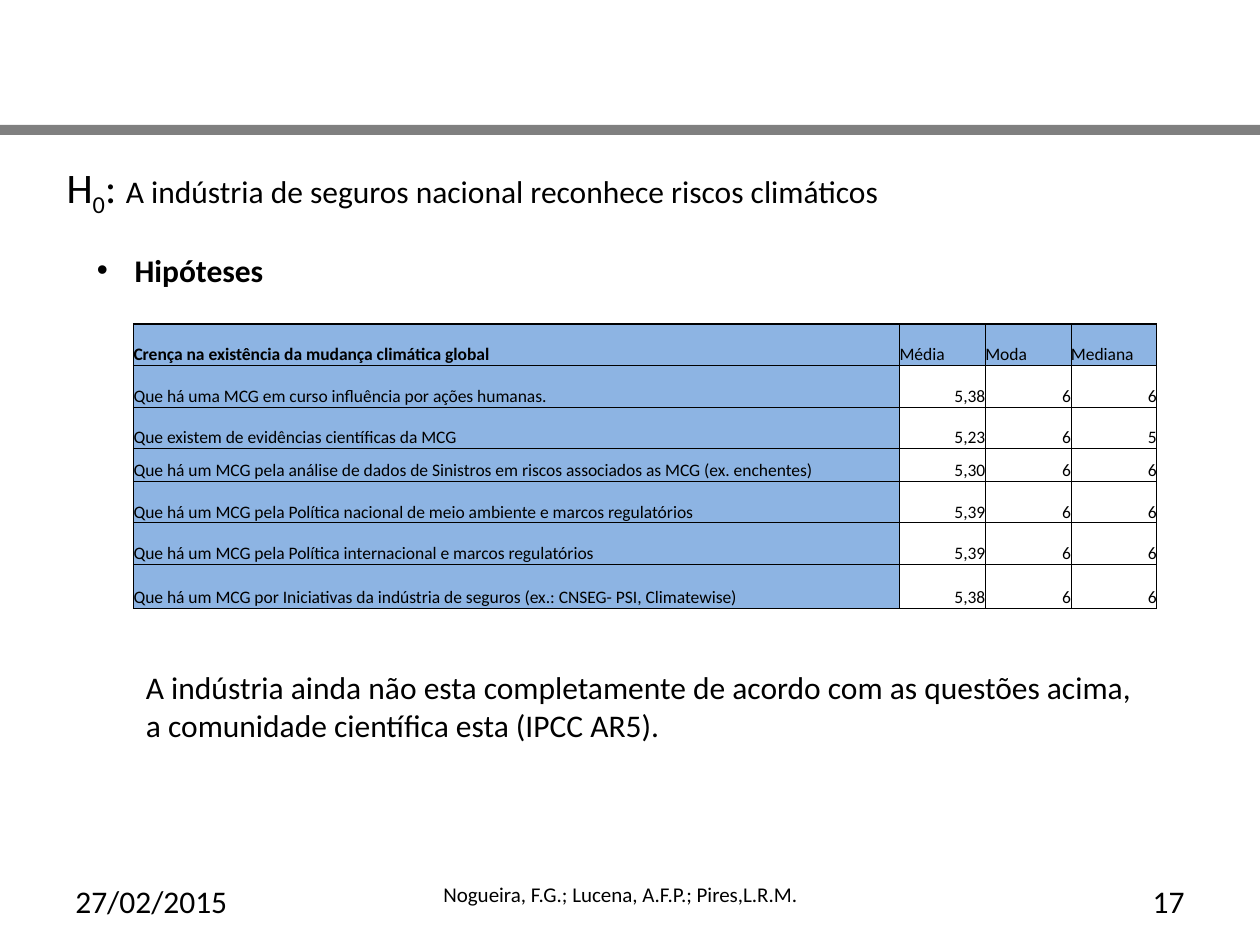
import pptx
import pptx.util
import pptx.dml.color
import pptx.enum.shapes
import pptx.enum.text
import pptx.oxml.ns
from lxml import etree

Inches = pptx.util.Inches
Pt = pptx.util.Pt
RGBColor = pptx.dml.color.RGBColor
ALIGN = pptx.enum.text.PP_ALIGN
qn = pptx.oxml.ns.qn

BLACK = RGBColor(0, 0, 0)
WHITE = RGBColor(255, 255, 255)
GRAY = RGBColor(0x80, 0x80, 0x80)
BLUE = RGBColor(0x8D, 0xB4, 0xE3)
FONT = "Calibri"

HEADER = ["Crença na existência da mudança climática global", "Média", "Moda", "Mediana"]
BELIEFS = [
    ["Que há uma MCG em curso influência por ações humanas.", "5,38", "6", "6"],
    ["Que existem de evidências científicas da MCG", "5,23", "6", "5"],
    ["Que há um MCG pela análise de dados de Sinistros em riscos associados as MCG (ex. enchentes)",
     "5,30", "6", "6"],
    ["Que há um MCG pela Política nacional de meio ambiente e marcos regulatórios", "5,39", "6", "6"],
    ["Que há um MCG pela Política internacional e marcos regulatórios", "5,39", "6", "6"],
    ["Que há um MCG por Iniciativas da indústria de seguros (ex.: CNSEG- PSI, Climatewise)",
     "5,38", "6", "6"],
]
COL_WIDTHS = [6.08, 0.68, 0.68, 0.68]
ROW_HEIGHTS = [0.33, 0.33, 0.33, 0.26, 0.33, 0.33, 0.35]


def add_run(p, text, size, bold=False):
    r = p.add_run()
    r.text = text
    r.font.name = FONT
    r.font.size = Pt(size)
    r.font.bold = bold
    r.font.color.rgb = BLACK
    return r


def add_text_box(s, left, top, width, height):
    sp = s.shapes.add_textbox(Inches(left), Inches(top), Inches(width), Inches(height))
    sp.text_frame.word_wrap = True
    return sp.text_frame.paragraphs[0]


def add_text(s, box, text, size, align=ALIGN.LEFT):
    p = add_text_box(s, *box)
    p.alignment = align
    add_run(p, text, size)


def add_rule(s):
    sp = s.shapes.add_shape(pptx.enum.shapes.MSO_SHAPE.RECTANGLE,
                            Inches(0), Inches(0.99), Inches(10), Inches(0.08))
    sp.shadow.inherit = False
    sp.fill.solid()
    sp.fill.fore_color.rgb = GRAY
    sp.line.fill.background()


def add_title(s):
    p = add_text_box(s, 0.43, 1.23, 9.13, 0.55)
    add_run(p, "H", 24)
    subscript = add_run(p, "0", 24)
    subscript._r.get_or_add_rPr().set("baseline", "-25000")
    add_run(p, ": ", 24)
    add_run(p, "A indústria de seguros nacional reconhece riscos climáticos", 18)


def add_bullet(s, text):
    p = add_text_box(s, 0.67, 1.94, 8.58, 0.45)
    p_pr = p._p.get_or_add_pPr()
    p_pr.set("marL", str(Inches(0.3)))
    p_pr.set("indent", str(Inches(-0.3)))
    etree.SubElement(p_pr, qn("a:buFont"), typeface="Arial")
    etree.SubElement(p_pr, qn("a:buChar"), char="•")
    add_run(p, text, 18, bold=True)


def set_border(cell, side, width):
    ln = etree.SubElement(cell._tc.get_or_add_tcPr(), qn("a:ln" + side), w=str(Pt(width)))
    fill = etree.SubElement(ln, qn("a:solidFill"))
    etree.SubElement(fill, qn("a:srgbClr"), val=str(BLACK))


def add_table(s, rows):
    last_row, last_col = len(rows) - 1, len(rows[0]) - 1
    table = s.shapes.add_table(len(rows), len(rows[0]), Inches(1.06), Inches(2.57),
                               Inches(sum(COL_WIDTHS)), Inches(sum(ROW_HEIGHTS))).table
    table.first_row = False
    table.horz_banding = False
    for col, width in zip(table.columns, COL_WIDTHS):
        col.width = Inches(width)
    for row, height in zip(table.rows, ROW_HEIGHTS):
        row.height = Inches(height)
    for i, values in enumerate(rows):
        for j, value in enumerate(values):
            cell = table.cell(i, j)
            cell.margin_left = cell.margin_right = cell.margin_top = cell.margin_bottom = 0
            cell.vertical_anchor = pptx.enum.text.MSO_ANCHOR.BOTTOM
            outer = {"L": j == 0, "R": j == last_col, "T": i == 0, "B": i == last_row}
            for side, is_outer in outer.items():
                set_border(cell, side, 1 if is_outer else 0.5)
            is_label = i == 0 or j == 0
            cell.fill.solid()
            cell.fill.fore_color.rgb = BLUE if is_label else WHITE
            p = cell.text_frame.paragraphs[0]
            p.alignment = ALIGN.LEFT if is_label else ALIGN.RIGHT
            add_run(p, value, 10, bold=i == 0 and j == 0)


def main():
    prs = pptx.Presentation()
    prs.slide_width = Inches(10)
    prs.slide_height = Inches(7.5)
    s = prs.slides.add_slide(prs.slide_layouts[6])
    add_rule(s)
    add_text(s, (0.5, 6.95, 2.33, 0.4), "27/02/2015", 18)
    add_text(s, (7.17, 6.95, 2.33, 0.4), "17", 18, ALIGN.RIGHT)
    add_text(s, (3.42, 6.95, 3.17, 0.4), "Nogueira, F.G.; Lucena, A.F.P.; Pires,L.R.M.", 12)
    add_title(s)
    add_bullet(s, "Hipóteses")
    add_table(s, [HEADER] + BELIEFS)
    add_text(s, (1.06, 5.25, 8.11, 0.71),
             "A indústria ainda não esta completamente de acordo com as questões acima, "
             "a comunidade científica esta (IPCC AR5).", 18)
    prs.save("out.pptx")


if __name__ == "__main__":
    main()
